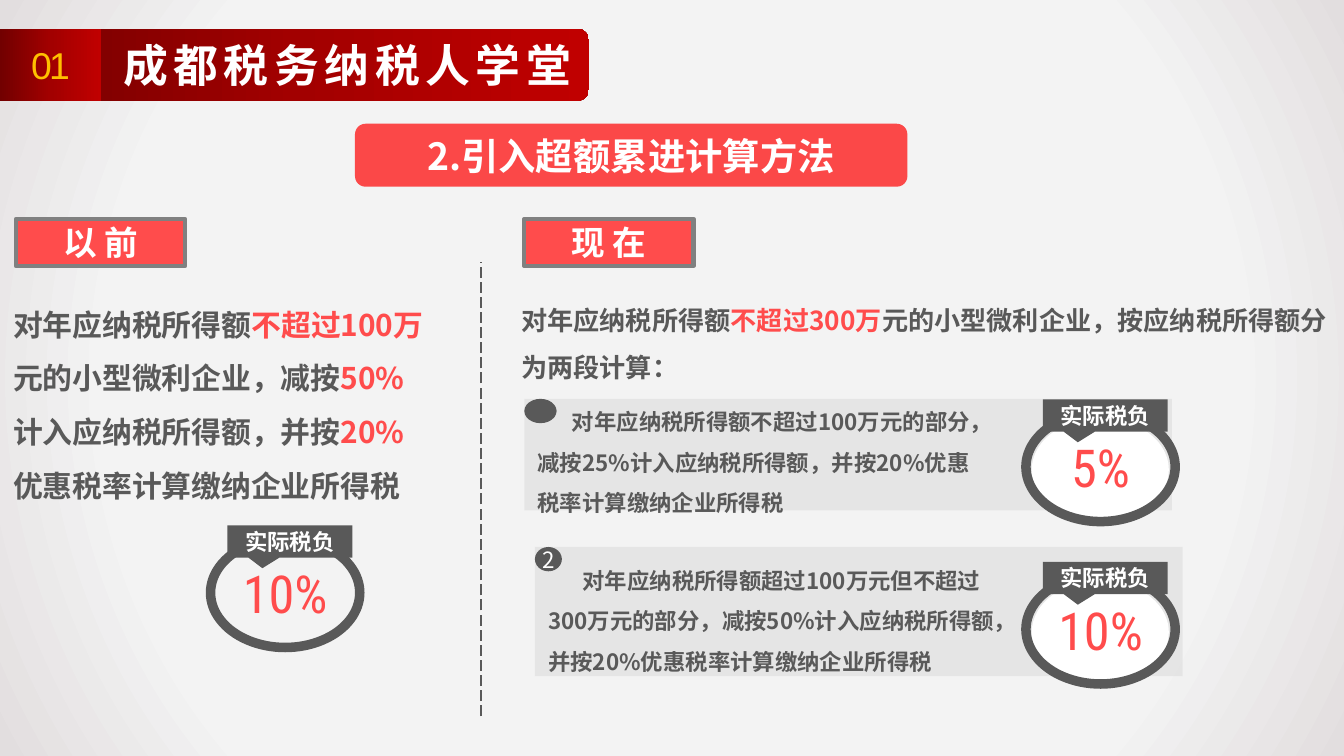
from dataclasses import dataclass
from typing import Optional

from lxml import etree
from pptx import Presentation
from pptx.dml.color import RGBColor
from pptx.enum.dml import MSO_LINE
from pptx.enum.shapes import MSO_CONNECTOR, MSO_SHAPE as Geo
from pptx.enum.text import MSO_ANCHOR, MSO_AUTO_SIZE, PP_ALIGN
from pptx.oxml import parse_xml
from pptx.oxml.ns import nsdecls, qn
from pptx.util import Cm, Pt

COLORS = {
    "gray": "595959", "red": "FF4C4C", "pure_red": "FF0000", "white": "FFFFFF",
    "gold": "FFC000", "band": "D9D9D9", "border": "808080",
}
PAGE_STOPS = [(0, "F5F5F5"), (73, "F3F3F3"), (100, "E2DEDF")]
HEADER_STOPS = [(0, "720000"), (50, "A20000"), (100, "C00000")]
RADIAL = '<a:path path="circle"><a:fillToRect l="50000" t="50000" r="50000" b="50000"/></a:path>'
LINEAR = '<a:lin ang="0" scaled="0"/>'
CJK = "Noto Sans CJK SC"


@dataclass(frozen=True)
class Box:
    left: float
    top: float
    width: float
    height: float

    def emu(self) -> tuple:
        return Cm(self.left), Cm(self.top), Cm(self.width), Cm(self.height)


@dataclass(frozen=True)
class Style:
    size: float
    color: str = "white"
    font: str = CJK
    bold: bool = True
    spacing: Optional[int] = None  # hundredths of a point


@dataclass(frozen=True)
class Badge:
    left: float
    top: float
    rate: str


@dataclass(frozen=True)
class Bracket:
    band: Box
    text: Box
    bullet_width: float
    number: str
    rule: str


BADGES = [Badge(3.89, 10.08, "10%"), Badge(19.3, 7.7, "5%"), Badge(19.3, 10.77, "10%")]
BRACKETS = [
    Bracket(Box(9.91, 7.54, 12.24, 2.11), Box(9.91, 7.34, 8.69, 2.54), 0.61, "",
            "对年应纳税所得额不超过100万元的部分，减按25%计入应纳税所得额，并按20%优惠税率计算缴纳企业所得税"),
    Bracket(Box(10.11, 10.34, 12.24, 2.44), Box(10.11, 10.34, 9.04, 2.54), 0.51, "2",
            "对年应纳税所得额超过100万元但不超过300万元的部分，减按50%计入应纳税所得额，并按20%优惠税率计算缴纳企业所得税"),
]
BEFORE = [
    ("对年应纳税所得额", "gray"), ("不超过100万", "red"), ("元的小型微利企业，减按", "gray"),
    ("50%", "red"), ("计入应纳税所得额，并按", "gray"), ("20%", "red"),
    ("优惠税率计算缴纳企业所得税", "gray"),
]
NOW = [
    ("对年应纳税所得额", "gray"), ("不超过300万", "red"),
    ("元的小型微利企业，按应纳税所得额分为两段计算：", "gray"),
]


def rgb(name: str) -> RGBColor:
    return RGBColor.from_string(COLORS[name])


def add_run(p, text: str, style: Style, color: str) -> None:
    r = p.add_run()
    r.text = text
    font = r.font
    font.size, font.bold, font.name = Pt(style.size), style.bold, style.font
    font.color.rgb = rgb(color)
    rpr = r._r.get_or_add_rPr()
    etree.SubElement(rpr, qn("a:ea")).set("typeface", style.font)
    if style.spacing is not None:
        rpr.set("spc", str(style.spacing))


def add_label(sp, text: str, style: Style) -> None:
    """Centre one run in a shape, free of inner margins."""
    tf = sp.text_frame
    tf.word_wrap = True
    tf.vertical_anchor = MSO_ANCHOR.MIDDLE
    tf.margin_left = tf.margin_right = tf.margin_top = tf.margin_bottom = 0
    p = tf.paragraphs[0]
    p.alignment = PP_ALIGN.CENTER
    add_run(p, text, style, style.color)


def add_shape(shapes, geo: Geo, box: Box, fill: str, alpha: Optional[int] = None):
    sp = shapes.add_shape(geo, *box.emu())
    sp.shadow.inherit = False
    sp.line.fill.background()
    sp.fill.solid()
    sp.fill.fore_color.rgb = rgb(fill)
    if alpha is not None:
        clr = sp._element.spPr.find(qn("a:solidFill"))[0]
        etree.SubElement(clr, qn("a:alpha")).set("val", str(alpha * 1000))
    return sp


def add_gradient(shapes, geo: Geo, box: Box, stops: list, direction: str) -> None:
    sp = add_shape(shapes, geo, box, "white")
    gs = "".join(f'<a:gs pos="{pos * 1000}"><a:srgbClr val="{c}"/></a:gs>' for pos, c in stops)
    grad = parse_xml(f'<a:gradFill {nsdecls("a")} rotWithShape="1">'
                     f"<a:gsLst>{gs}</a:gsLst>{direction}</a:gradFill>")
    spPr = sp._element.spPr
    spPr.replace(spPr.find(qn("a:solidFill")), grad)


def add_text(shapes, box: Box, runs: list, style: Style,
             line_spacing: Optional[float] = 1.5, indent: float = 0) -> None:
    tf = shapes.add_textbox(*box.emu()).text_frame
    tf.word_wrap = True
    tf.auto_size = MSO_AUTO_SIZE.SHAPE_TO_FIT_TEXT
    p = tf.paragraphs[0]
    p.line_spacing = line_spacing
    if indent:
        ppr = p._p.get_or_add_pPr()
        ppr.set("marL", "0")
        ppr.set("indent", str(Cm(indent)))
    for text, color in runs:
        add_run(p, text, style, color)


def add_tag(shapes, left: float, text: str) -> None:
    sp = add_shape(shapes, Geo.RECTANGLE, Box(left, 4.14, 3.2, 0.89), "red")
    sp.line.color.rgb = rgb("border")
    sp.line.width = Pt(2.25)
    add_label(sp, text, Style(18))


def add_badge(shapes, badge: Badge) -> None:
    group = shapes.add_group_shape().shapes
    ring = add_shape(group, Geo.DONUT, Box(badge.left, badge.top, 3, 2.25), "gray")
    ring.adjustments[0] = 0.08
    add_label(ring, badge.rate, Style(28, "red", "Roboto Condensed", False))
    callout = add_shape(group, Geo.RECTANGULAR_CALLOUT,
                        Box(badge.left + 0.41, badge.top - 0.15, 2.36, 0.61), "gray")
    callout.adjustments[0], callout.adjustments[1] = -0.22, 0.83
    add_label(callout, "实际税负", Style(12))


def add_divider(shapes) -> None:
    line = shapes.add_connector(MSO_CONNECTOR.STRAIGHT, Cm(9.09), Cm(13.54), Cm(9.09), Cm(4.95))
    line.line.color.rgb = rgb("gray")
    line.line.width = Pt(0.75)
    line.line.dash_style = MSO_LINE.LONG_DASH
    etree.SubElement(line._element.spPr, qn("a:effectLst"))


def main() -> None:
    prs = Presentation()
    prs.slide_width, prs.slide_height = Cm(25.4), Cm(14.29)
    shapes = prs.slides.add_slide(prs.slide_layouts[6]).shapes

    add_gradient(shapes, Geo.RECTANGLE, Box(0, 0, 25.4, 14.29), PAGE_STOPS, RADIAL)
    add_gradient(shapes, Geo.ROUNDED_RECTANGLE, Box(0.03, 0.54, 11.1, 1.37), HEADER_STOPS, LINEAR)
    number_box = Box(0, 0.54, 1.91, 1.37)
    add_gradient(shapes, Geo.RECTANGLE, number_box, HEADER_STOPS, LINEAR)
    number = shapes.add_textbox(*number_box.emu())
    add_label(number, "01", Style(20, "gold", "Arial", False, -150))

    for bracket in reversed(BRACKETS):
        add_shape(shapes, Geo.RECTANGLE, bracket.band, "band", 50)
    for badge in BADGES[1:]:
        add_shape(shapes, Geo.OVAL, Box(badge.left + 0.2, badge.top + 0.2, 2.59, 1.96), "white")
    add_divider(shapes)

    title = add_shape(shapes, Geo.FLOWCHART_ALTERNATE_PROCESS,
                      Box(6.71, 2.34, 10.44, 1.19), "pure_red", 70)
    add_label(title, "2.引入超额累进计算方法", Style(20))
    add_tag(shapes, 0.3, "以 前")
    add_tag(shapes, 9.91, "现 在")
    add_text(shapes, Box(0, 5.33, 8.41, 4.32), BEFORE, Style(16))
    add_text(shapes, Box(9.6, 5.33, 15.8, 2.03), NOW, Style(14))

    for bracket in BRACKETS:
        add_text(shapes, bracket.text, [(bracket.rule, "gray")], Style(12), indent=0.65)
    for badge in BADGES:
        add_badge(shapes, badge)
    for bracket in BRACKETS:
        band = bracket.band
        bullet = add_shape(shapes, Geo.OVAL,
                           Box(band.left, band.top, bracket.bullet_width, 0.46), "gray")
        if bracket.number:
            add_label(bullet, bracket.number, Style(12, bold=False))

    add_text(shapes, Box(2.08, 0.58, 13.77, 1.3), [("成都税务纳税人学堂", "white")],
             Style(24, spacing=300), line_spacing=None)
    prs.save("out.pptx")


if __name__ == "__main__":
    main()
